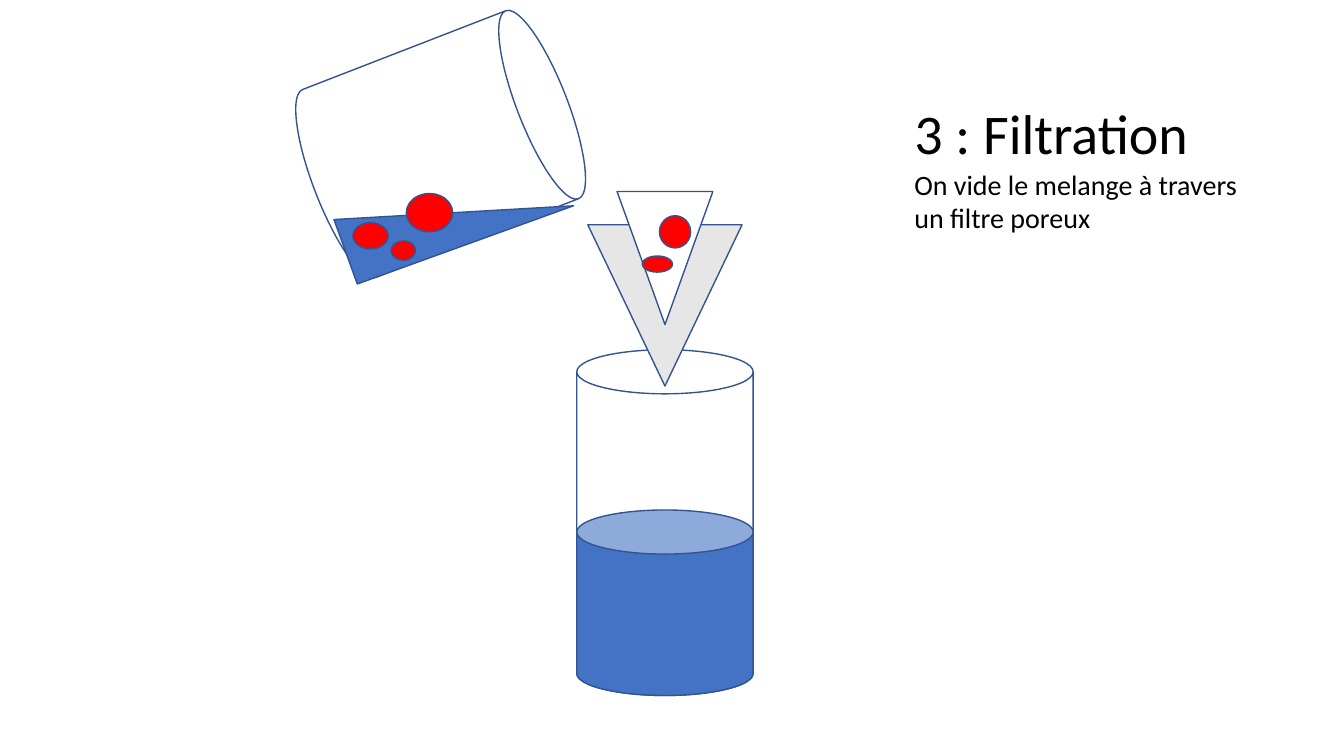
"""Build the filtration slide: a tilted beaker pours through a filter into a jar."""
from dataclasses import dataclass

from pptx import Presentation
from pptx.dml.color import RGBColor
from pptx.enum.shapes import MSO_SHAPE
from pptx.enum.text import MSO_ANCHOR, MSO_AUTO_SIZE, PP_ALIGN
from pptx.util import Inches, Pt


@dataclass(frozen=True)
class Theme:
    font: str = "Calibri"
    ink: str = "000000"
    edge: str = "325491"
    glass: str = "FFFFFF"
    funnel: str = "E7E6E6"
    water: str = "4472C4"
    grain: str = "FF0000"
    head: int = 40
    body: int = 20
    line: int = 1


THEME = Theme()
WIDE, HIGH = 13.33, 7.5
TITLE = "3 : Filtration"
NOTE = "On vide le melange à travers un filtre poreux"
TEXT_LEFT, TEXT_WIDE = 8.97, 3.57
TITLE_TOP, NOTE_TOP, NOTE_END = 0.93, 1.66, 2.38

AXIS, JAR_WIDE, JAR_END = 6.595, 1.75, 6.9
CAN, CONE = MSO_SHAPE.CAN, MSO_SHAPE.ISOSCELES_TRIANGLE
WEDGE, OVAL = MSO_SHAPE.RIGHT_TRIANGLE, MSO_SHAPE.OVAL


def on_axis(top, wide, end):
    return AXIS - wide / 2, top, wide, end - top


PARTS = [
    (CAN, on_axis(3.47, JAR_WIDE, JAR_END), 0, THEME.glass),
    (CAN, (3.37, 0.1, 2, 2.66), 68.8, THEME.glass),
    (CONE, on_axis(2.23, 1.53, 3.83), 180, THEME.funnel),
    (CONE, on_axis(1.9, 0.95, 3.22), 180, THEME.glass),
    (CAN, on_axis(5.06, JAR_WIDE, JAR_END), 0, THEME.water),
    (WEDGE, (3.36, 1.77, 2.28, 0.68), 340.1, THEME.water),
]
GRAINS = [
    (6.54, 2.14, 0.31, 0.32),
    (6.37, 2.54, 0.3, 0.16),
    (3.88, 2.39, 0.24, 0.19),
    (4.03, 1.92, 0.46, 0.38),
    (3.5, 2.21, 0.35, 0.26),
]


def draw(slide, kind, box, turn, fill):
    shape = slide.shapes.add_shape(kind, *map(Inches, box))
    shape.rotation = turn
    shape.shadow.inherit = False
    shape.fill.solid()
    shape.fill.fore_color.rgb = RGBColor.from_string(fill)
    shape.line.color.rgb = RGBColor.from_string(THEME.edge)
    shape.line.width = Pt(THEME.line)


def write(shape, text, size):
    frame = shape.text_frame
    frame.text = text
    frame.word_wrap = True
    frame.auto_size = MSO_AUTO_SIZE.NONE
    frame.vertical_anchor = MSO_ANCHOR.TOP
    frame.margin_bottom = 0
    line = frame.paragraphs[0]
    line.alignment = PP_ALIGN.LEFT
    line.font.name = THEME.font
    line.font.size = Pt(size)
    line.font.color.rgb = RGBColor.from_string(THEME.ink)


def main():
    deck = Presentation()
    deck.slide_width, deck.slide_height = Inches(WIDE), Inches(HIGH)
    slide = deck.slides.add_slide(deck.slide_layouts[5])

    for part in PARTS:
        draw(slide, *part)
    for box in GRAINS:
        draw(slide, OVAL, box, 0, THEME.grain)

    title = slide.shapes.title
    title.left, title.top = Inches(TEXT_LEFT), Inches(TITLE_TOP)
    title.width, title.height = Inches(TEXT_WIDE), Inches(NOTE_TOP - TITLE_TOP)
    write(title, TITLE, THEME.head)

    box = TEXT_LEFT, NOTE_TOP, TEXT_WIDE, NOTE_END - NOTE_TOP
    note = slide.shapes.add_textbox(*map(Inches, box))
    note.text_frame.margin_top = 0
    write(note, NOTE, THEME.body)

    deck.save("out.pptx")


if __name__ == "__main__":
    main()
